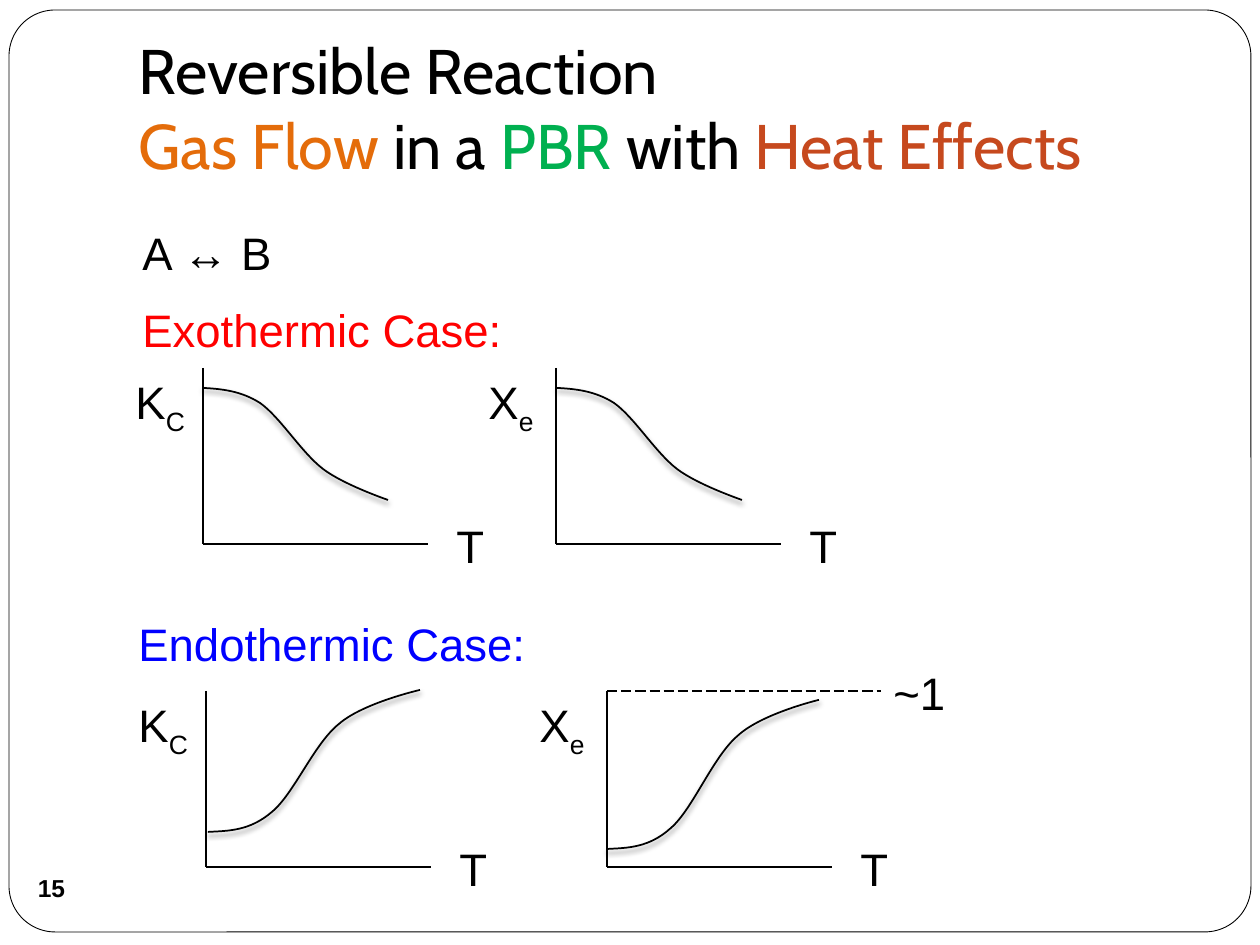
import pptx
import pptx.util
import pptx.dml.color
import pptx.enum.dml
import pptx.enum.shapes
import pptx.enum.text
import pptx.oxml
import pptx.oxml.ns

PX = 914400 // 126
COLORS = {"black": "000000", "white": "FFFFFF", "red": "FF0000", "blue": "0000FF",
          "orange": "E46C0A", "green": "00B050", "rust": "C6491E"}

# Content: lengths in pixels, 126 to the inch
TITLE = [
    [("Reversible Reaction", "black")],
    [("Gas Flow ", "orange"), ("in a ", "black"), ("PBR ", "green"),
     ("with ", "black"), ("Heat Effects", "rust")],
]
TEXTS = [  # text, colour, left, top, width
    ("A ↔ B", "black", 130, 219, 699),
    ("Exothermic Case:", "red", 130, 296, 503),
    ("Endothermic Case:", "blue", 126, 610, 524),
    ("~1", "black", 881, 659, 112),
]
# Bezier control points, measured from the start of each curve
FALLING = [(0, 0), (19, 1), (38, 3), (57, 15), (77, 29), (98, 64), (120, 81),
           (141, 97), (185, 112), (185, 112)]
RISING = [(0, 0), (21, -1), (42, -1), (64, -20), (86, -38), (106, -88), (131, -108),
          (155, -129), (212, -142), (212, -142)]
GRAPHS = [  # symbol, subscript, axis left, axis top, T width, curve, curve start, height factor
    ("K", "C", 203, 368, 64, FALLING, (203, 388), 1),
    ("X", "e", 556, 368, 48, FALLING, (557, 388), 1),
    ("K", "C", 206, 691, 64, RISING, (208, 832), 1),
    ("X", "e", 607, 691, 81, RISING, (607, 849), 1.05),
]
LIMIT = (607, 691, 881, 691)
AXIS_WIDTH, AXIS_HEIGHT = 225, 176
TEXT_HEIGHT = 68

deck = pptx.Presentation()
deck.slide_width, deck.slide_height = 1260 * PX, 945 * PX
slide = deck.slides.add_slide(deck.slide_layouts[5])
shapes = slide.shapes


def rgb(name):
    return pptx.dml.color.RGBColor.from_string(COLORS[name])


def emu(*lengths):
    return [round(length * PX) for length in lengths]


def style(run, color="black", size=26, font="Arial", bold=False):
    run.font.name, run.font.size, run.font.bold = font, pptx.util.Pt(size), bold
    run.font.color.rgb = rgb(color)


def add_effects(shape, content=""):
    shape._element.spPr.append(pptx.oxml.parse_xml(
        f'<a:effectLst {pptx.oxml.ns.nsdecls("a")}>{content}</a:effectLst>'))


def add_text(text, color, left, top, width, subscript=""):
    box = shapes.add_textbox(*emu(left, top, width, TEXT_HEIGHT))
    box.text_frame.word_wrap = True
    box.text_frame.auto_size = pptx.enum.text.MSO_AUTO_SIZE.SHAPE_TO_FIT_TEXT
    box.text_frame.text = text
    paragraph = box.text_frame.paragraphs[0]
    if subscript:
        paragraph.add_run().text = subscript
        paragraph.runs[1].font._element.set("baseline", "-25000")
    for run in paragraph.runs:
        style(run, color)


def add_line(*ends, dash=None):
    line = shapes.add_connector(pptx.enum.shapes.MSO_CONNECTOR.STRAIGHT, *emu(*ends))
    line.line.color.rgb, line.line.width = rgb("black"), pptx.util.Pt(0.75)
    if dash:
        line.line.dash_style = dash
    add_effects(line)


def add_curve(points, start, factor):
    placed = [emu(start[0] + x, start[1] + y * factor) for x, y in points]
    builder = shapes.build_freeform(*placed[0])
    builder.add_line_segments(placed[1:], close=False)
    curve = builder.convert_to_shape()
    # Every three segments become one Bezier segment
    segments = list(curve._element.iter(pptx.oxml.ns.qn("a:lnTo")))
    for first in range(0, len(segments), 3):
        bend = pptx.oxml.parse_xml(f'<a:cubicBezTo {pptx.oxml.ns.nsdecls("a")}/>')
        segments[first].addprevious(bend)
        for segment in segments[first:first + 3]:
            bend.append(segment[0])
            segment.getparent().remove(segment)
    curve.fill.background()
    curve.line.color.rgb, curve.line.width = rgb("black"), pptx.util.Pt(1)
    add_effects(curve, '<a:outerShdw blurRad="38100" dist="25400" dir="5400000" rotWithShape="0">'
                       '<a:srgbClr val="000000"><a:alpha val="50000"/></a:srgbClr></a:outerShdw>')


# Frame
frame = shapes.add_shape(pptx.enum.shapes.MSO_SHAPE.ROUNDED_RECTANGLE, *emu(9, 10, 1242, 922))
frame.adjustments[0] = 0.05
frame.shadow.inherit = False
frame.fill.solid()
frame.fill.fore_color.rgb = rgb("white")
frame.line.color.rgb, frame.line.width = rgb("black"), pptx.util.Pt(0.5)
shapes._spTree.insert(2, frame._element)

# Title
title = shapes.title
title.left, title.top, title.width, title.height = emu(126, 38, 1071, 157)
heading = title.text_frame
heading.auto_size = pptx.enum.text.MSO_AUTO_SIZE.NONE
heading.vertical_anchor = pptx.enum.text.MSO_ANCHOR.BOTTOM
heading.margin_bottom = pptx.util.Inches(0.1)
heading_line = heading.paragraphs[0]
heading_line.alignment = pptx.enum.text.PP_ALIGN.LEFT
for number, parts in enumerate(TITLE):
    if number:
        heading_line.add_line_break()
    for words, color in parts:
        run = heading_line.add_run()
        run.text = words
        style(run, color, 36, "Cabin")

# Slide number
badge = shapes.add_shape(pptx.enum.shapes.MSO_SHAPE.OVAL, *emu(20, 856, 63, 63))
badge.shadow.inherit = False
badge.fill.background()
badge.line.fill.background()
page = badge.text_frame
page.margin_left = page.margin_right = page.margin_top = page.margin_bottom = 0
page.word_wrap = False
page.vertical_anchor = pptx.enum.text.MSO_ANCHOR.MIDDLE
page.text = "15"
page.paragraphs[0].alignment = pptx.enum.text.PP_ALIGN.CENTER
style(page.paragraphs[0].runs[0], size=14, bold=True)

# Headings and graphs
for entry in TEXTS:
    add_text(*entry)
for symbol, subscript, left, top, t_width, points, start, factor in GRAPHS:
    bottom = top + AXIS_HEIGHT
    add_line(left, top, left, bottom)
    add_line(left, bottom, left + AXIS_WIDTH, bottom)
    add_text(symbol, "black", left - 80, top, 96, subscript)
    add_text("T", "black", left + 241, bottom - 32, t_width)
    add_curve(points, start, factor)
add_line(*LIMIT, dash=pptx.enum.dml.MSO_LINE.LONG_DASH)

deck.save("out.pptx")
